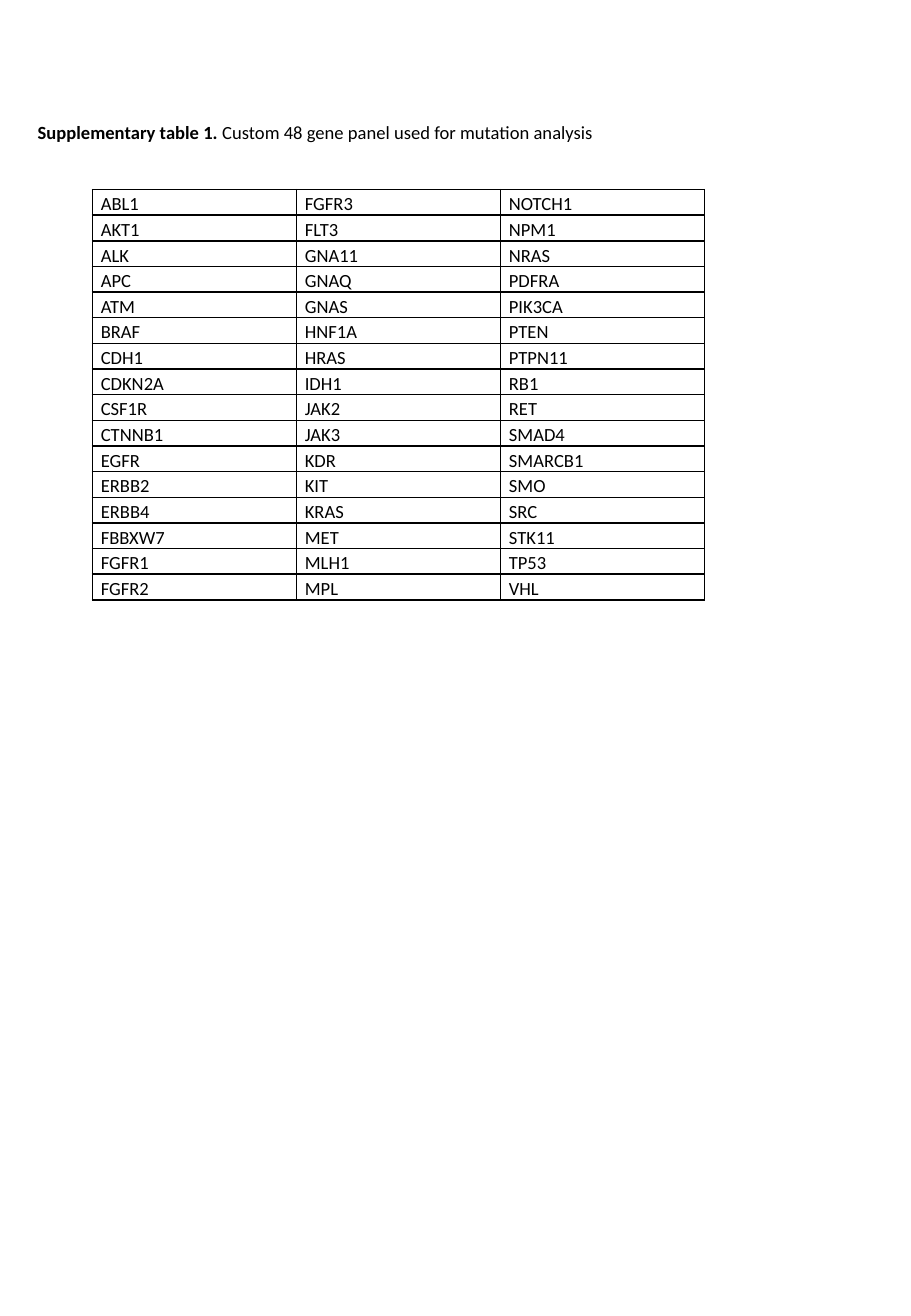
from lxml.etree import SubElement
from pptx import Presentation
from pptx.dml.color import RGBColor
from pptx.enum.text import MSO_ANCHOR, MSO_AUTO_SIZE, PP_ALIGN
from pptx.oxml.ns import qn
from pptx.util import Inches, Pt

BLACK = RGBColor(0, 0, 0)
FONT = "Calibri"
CAPTION = (
    ("Supplementary table 1. ", True),
    ("Custom 48 gene panel used for mutation analysis", False),
)
GENE_COLUMNS = (
    ("ABL1", "AKT1", "ALK", "APC", "ATM", "BRAF", "CDH1", "CDKN2A",
     "CSF1R", "CTNNB1", "EGFR", "ERBB2", "ERBB4", "FBBXW7", "FGFR1", "FGFR2"),
    ("FGFR3", "FLT3", "GNA11", "GNAQ", "GNAS", "HNF1A", "HRAS", "IDH1",
     "JAK2", "JAK3", "KDR", "KIT", "KRAS", "MET", "MLH1", "MPL"),
    ("NOTCH1", "NPM1", "NRAS", "PDFRA", "PIK3CA", "PTEN", "PTPN11", "RB1",
     "RET", "SMAD4", "SMARCB1", "SMO", "SRC", "STK11", "TP53", "VHL"),
)
COLUMN_WIDTH = Inches(1.68)
ROW_HEIGHT = Inches(0.21)


def format_run(run, bold=False):
    run.font.name = FONT
    run.font.size = Pt(11)
    run.font.bold = bold
    run.font.color.rgb = BLACK


def add_borders(cell):
    properties = cell._tc.get_or_add_tcPr()
    for position, side in enumerate(("lnL", "lnR", "lnT", "lnB")):
        border = SubElement(properties, qn(f"a:{side}"), w=str(Pt(1)))
        fill = SubElement(border, qn("a:solidFill"))
        SubElement(fill, qn("a:srgbClr"), val=str(BLACK))
        properties.insert(position, border)


def add_caption(slide):
    caption = slide.shapes.title
    caption.left, caption.top = Inches(0.21), Inches(0.94)
    caption.width, caption.height = Inches(4.85), Inches(0.29)
    frame = caption.text_frame
    frame.word_wrap = False
    frame.auto_size = MSO_AUTO_SIZE.SHAPE_TO_FIT_TEXT
    frame.vertical_anchor = MSO_ANCHOR.MIDDLE
    paragraph = frame.paragraphs[0]
    paragraph.alignment = PP_ALIGN.LEFT
    for wording, bold in CAPTION:
        run = paragraph.add_run()
        run.text = wording
        format_run(run, bold)


def add_gene_cell(cell, gene):
    cell.margin_left = cell.margin_right = Inches(0.07)
    cell.margin_top = cell.margin_bottom = 0
    cell.fill.background()
    add_borders(cell)
    paragraph = cell.text_frame.paragraphs[0]
    paragraph.text = gene
    paragraph.line_spacing = 1.15
    paragraph.space_after = Pt(10)
    format_run(paragraph.runs[0])


def add_gene_table(slide):
    rows, columns = len(GENE_COLUMNS[0]), len(GENE_COLUMNS)
    genes = slide.shapes.add_table(
        rows, columns, Inches(0.76), Inches(1.56),
        COLUMN_WIDTH * columns, ROW_HEIGHT * rows).table
    genes.first_row = False
    genes.horz_banding = False
    for column, names in enumerate(GENE_COLUMNS):
        for row, gene in enumerate(names):
            add_gene_cell(genes.cell(row, column), gene)


def main():
    deck = Presentation()
    deck.slide_width, deck.slide_height = Inches(7.5), Inches(10.83)
    slide = deck.slides.add_slide(deck.slide_layouts.get_by_name("Title Only"))
    add_caption(slide)
    add_gene_table(slide)
    deck.save("out.pptx")


if __name__ == "__main__":
    main()
